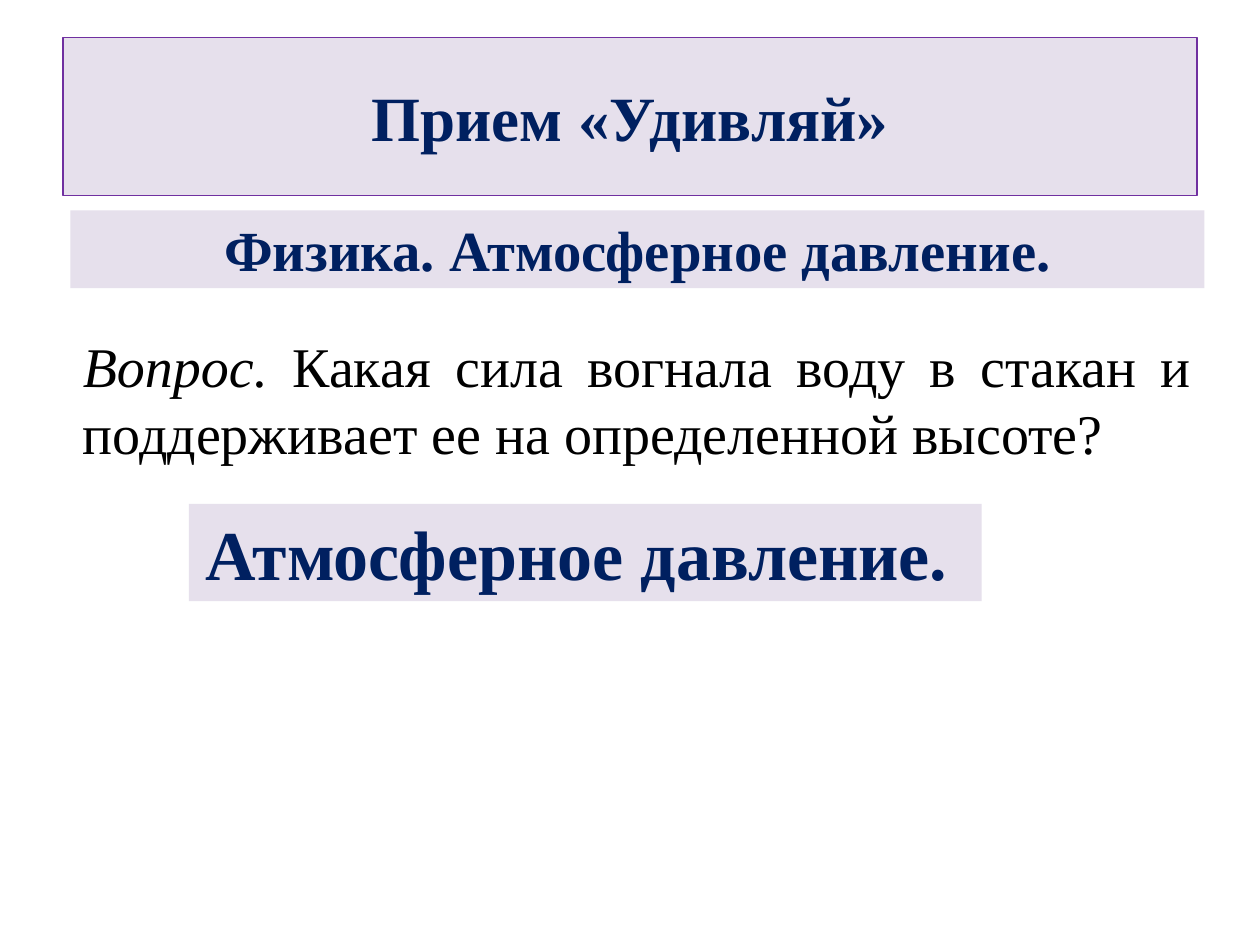
from dataclasses import dataclass
from typing import Optional

from pptx import Presentation
from pptx.dml.color import RGBColor
from pptx.enum.shapes import MSO_SHAPE
from pptx.enum.text import MSO_ANCHOR, PP_ALIGN
from pptx.util import Cm, Pt

FONT = "Times New Roman"
BLACK = RGBColor(0x00, 0x00, 0x00)
NAVY = RGBColor(0x00, 0x20, 0x60)
LILAC = RGBColor(0xE6, 0xE0, 0xEC)
PURPLE = RGBColor(0x70, 0x30, 0xA0)


@dataclass(frozen=True)
class Banner:
    text: str
    left: float
    top: float
    width: float
    height: float
    size: float
    anchor: MSO_ANCHOR = MSO_ANCHOR.MIDDLE
    wrap: bool = True
    outline: Optional[RGBColor] = None


BANNERS = [
    Banner("Прием «Удивляй»", 1.27, 0.76, 22.86, 3.18, 36, outline=PURPLE),
    Banner("Атмосферное давление. ", 3.81, 10.16, 15.98, 1.96, 40,
           anchor=MSO_ANCHOR.TOP, wrap=False),
    Banner("Физика. Атмосферное давление.", 1.42, 4.24, 22.86, 1.57, 32.4),
]


def add_text(paragraph, text: str, *, size: float, color: RGBColor,
             bold: bool = False, italic: bool = False) -> None:
    run = paragraph.add_run()
    run.text = text
    font = run.font
    font.name = FONT
    font.size = Pt(size)
    font.color.rgb = color
    font.bold = bold
    font.italic = italic


def add_banner(slide, banner: Banner) -> None:
    shape = slide.shapes.add_shape(
        MSO_SHAPE.RECTANGLE, Cm(banner.left), Cm(banner.top),
        Cm(banner.width), Cm(banner.height))
    shape.shadow.inherit = False
    shape.fill.solid()
    shape.fill.fore_color.rgb = LILAC
    if banner.outline is None:
        shape.line.fill.background()
    else:
        shape.line.color.rgb = banner.outline
        shape.line.width = Pt(0.75)
    frame = shape.text_frame
    frame.word_wrap = banner.wrap
    frame.vertical_anchor = banner.anchor
    paragraph = frame.paragraphs[0]
    paragraph.alignment = PP_ALIGN.CENTER
    add_text(paragraph, banner.text, size=banner.size, color=NAVY, bold=True)


def add_question(slide) -> None:
    box = slide.shapes.add_textbox(Cm(1.42), Cm(6.55), Cm(22.86), Cm(3.81))
    frame = box.text_frame
    frame.word_wrap = True
    paragraph = frame.paragraphs[0]
    paragraph.alignment = PP_ALIGN.JUSTIFY
    add_text(paragraph, "Вопрос.", size=32, color=BLACK, italic=True)
    add_text(paragraph, " Какая сила вогнала воду в стакан и "
             "поддерживает ее на определенной высоте?", size=32, color=BLACK)


def main() -> None:
    presentation = Presentation()
    presentation.slide_width = Cm(25.4)
    presentation.slide_height = Cm(19.05)
    slide = presentation.slides.add_slide(presentation.slide_layouts[6])
    add_question(slide)
    for banner in BANNERS:
        add_banner(slide, banner)
    presentation.save("out.pptx")


if __name__ == "__main__":
    main()
